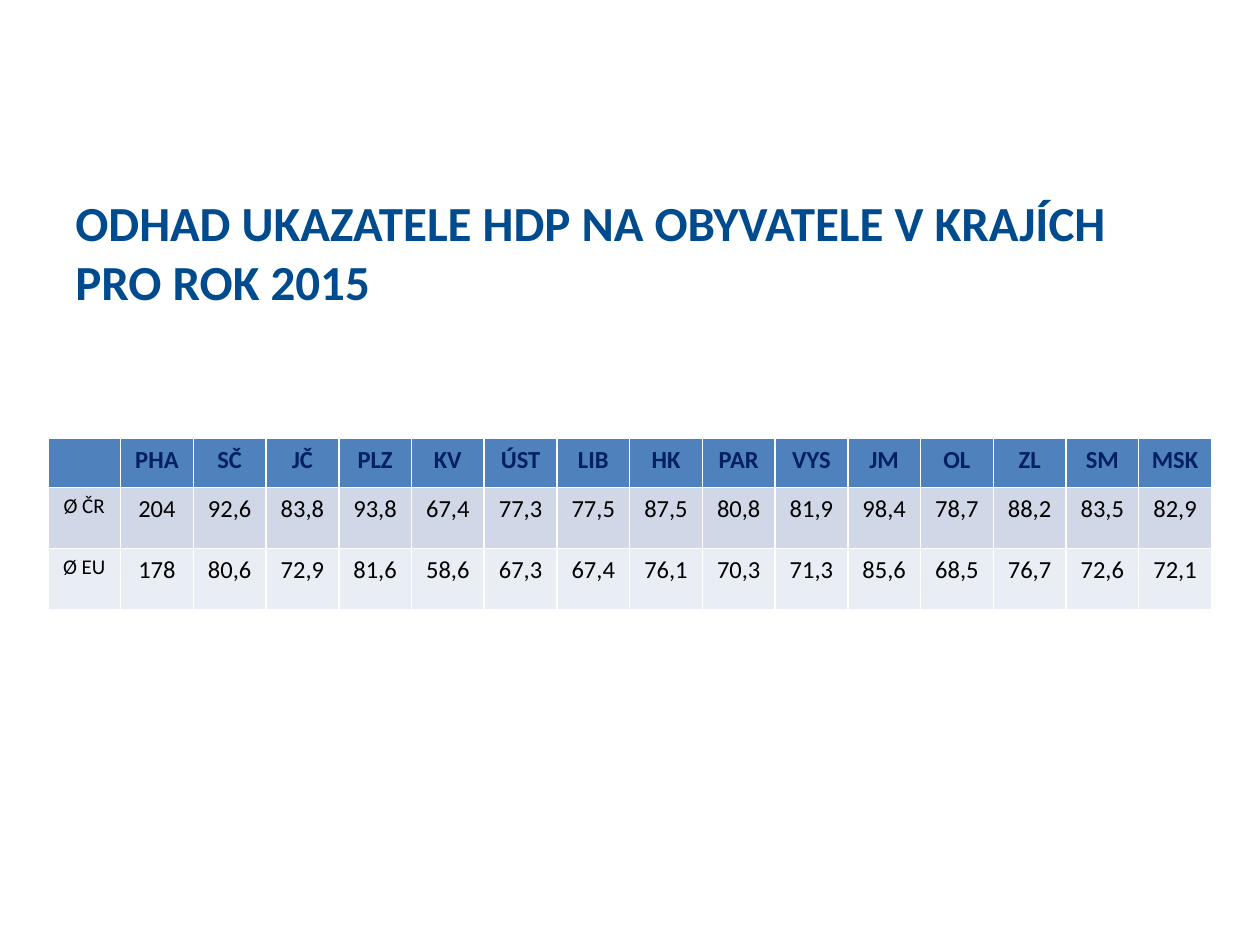
from pptx import Presentation
from pptx.dml.color import RGBColor
from pptx.enum.text import MSO_ANCHOR, PP_ALIGN
from pptx.util import Inches, Pt

TITLE = "ODHAD UKAZATELE HDP NA OBYVATELE V KRAJÍCH PRO ROK 2015"
REGIONS = ["", "PHA", "SČ", "JČ", "PLZ", "KV", "ÚST", "LIB", "HK", "PAR",
           "VYS", "JM", "OL", "ZL", "SM", "MSK"]
CZECH = ["Ø ČR", "204", "92,6", "83,8", "93,8", "67,4", "77,3", "77,5", "87,5",
         "80,8", "81,9", "98,4", "78,7", "88,2", "83,5", "82,9"]
EUROPE = ["Ø EU", "178", "80,6", "72,9", "81,6", "58,6", "67,3", "67,4", "76,1",
          "70,3", "71,3", "85,6", "68,5", "76,7", "72,6", "72,1"]

FONT = "Calibri"
BLUE = RGBColor(0x00, 0x4B, 0x8E)
NAVY = RGBColor(0x00, 0x20, 0x60)
BLACK = RGBColor(0x00, 0x00, 0x00)
HEAD = RGBColor(0x4F, 0x81, 0xBD)
BAND = RGBColor(0xD0, 0xD8, 0xE8)
PALE = RGBColor(0xE9, 0xED, 0xF4)

# texts, row height, fill, text colour, bold
ROWS = [
    (REGIONS, 0.39, HEAD, NAVY, True),
    (CZECH, 0.485, BAND, BLACK, False),
    (EUROPE, 0.485, PALE, BLACK, False),
]
WIDTH = 9.24


def write(frame, text, size, color, bold):
    frame.text = text
    font = frame.paragraphs[0].font
    font.name, font.size, font.bold = FONT, Pt(size), bold
    font.color.rgb = color
    for run in frame.paragraphs[0].runs:
        run.font.name, run.font.size, run.font.bold = FONT, Pt(size), bold
        run.font.color.rgb = color


def add_title(slide):
    box = slide.shapes.add_textbox(Inches(0.5), Inches(1.48), Inches(9), Inches(0.72))
    frame = box.text_frame
    frame.word_wrap = True
    frame.vertical_anchor = MSO_ANCHOR.TOP
    write(frame, TITLE, 28, BLUE, True)


def add_grid(slide):
    count = len(REGIONS)
    height = sum(row[1] for row in ROWS)
    table = slide.shapes.add_table(len(ROWS), count, Inches(0.38), Inches(3.48),
                                   Inches(WIDTH), Inches(height)).table
    for col in table.columns:
        col.width = Inches(WIDTH / count)
    for r, (texts, tall, fill, color, bold) in enumerate(ROWS):
        table.rows[r].height = Inches(tall)
        for c, text in enumerate(texts):
            cell = table.cell(r, c)
            cell.margin_left = cell.margin_right = Inches(0.05)
            cell.fill.solid()
            cell.fill.fore_color.rgb = fill
            size = 12 if r and c == 0 else 14
            write(cell.text_frame, text, size, color, bold)
            cell.text_frame.paragraphs[0].alignment = PP_ALIGN.CENTER


def main():
    deck = Presentation()
    deck.slide_width, deck.slide_height = Inches(10), Inches(7.5)
    slide = deck.slides.add_slide(deck.slide_layouts[6])
    add_title(slide)
    add_grid(slide)
    deck.save("out.pptx")


if __name__ == "__main__":
    main()
